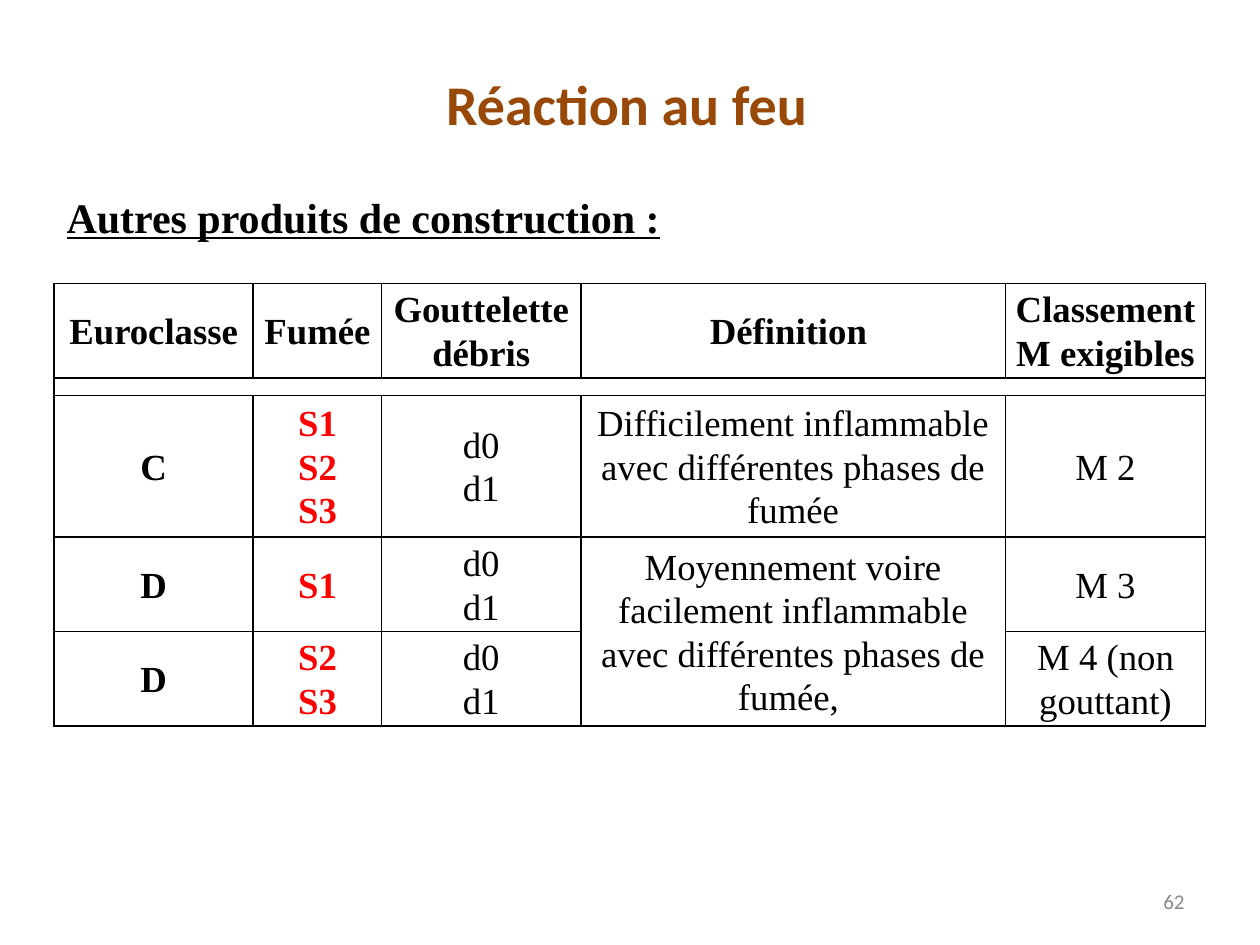
from pptx import Presentation
from pptx.dml.color import RGBColor
from pptx.enum import text as t
from pptx.oxml import xmlchemy as x
from pptx.util import Inches, Pt

BLACK = RGBColor(0, 0, 0)
RED = RGBColor(0xFF, 0, 0)
BROWN = RGBColor(0x98, 0x48, 0x07)
GREY = RGBColor(0x89, 0x89, 0x89)
SANS, SERIF = "Calibri", "Times New Roman"
LEFT, MID, RIGHT = t.PP_ALIGN.LEFT, t.PP_ALIGN.CENTER, t.PP_ALIGN.RIGHT


class Page:
    """Style and current slide."""

    def __init__(self, deck):
        self.slide = deck.slides.add_slide(deck.slide_layouts[6])

    def run(self, para, words, size, face, color, bold=False, line=False):
        run = para.add_run()
        run.text = words
        font = run.font
        font.size, font.name, font.bold = Pt(size), face, bold
        font.color.rgb = color
        if line:
            font.underline = True

    def label(self, box, words, size, face, color, align=MID,
              anchor=t.MSO_ANCHOR.MIDDLE, wrap=True, **style):
        frame = self.slide.shapes.add_textbox(*map(Inches, box)).text_frame
        frame.word_wrap, frame.vertical_anchor = wrap, anchor
        if not wrap:
            frame.auto_size = t.MSO_AUTO_SIZE.SHAPE_TO_FIT_TEXT
        para = frame.paragraphs[0]
        para.alignment = align
        self.run(para, words, size, face, color, **style)

    def border(self, cell):
        props = cell._tc.get_or_add_tcPr()
        for side in ("lnL", "lnR", "lnT", "lnB"):
            edge = x.OxmlElement(f"a:{side}")
            edge.set("w", str(Pt(1)))
            fill = x.OxmlElement("a:solidFill")
            tint = x.OxmlElement("a:srgbClr")
            tint.set("val", str(BLACK))
            fill.append(tint)
            edge.append(fill)
            props.append(edge)

    def cell(self, cell, lines, color, bold):
        self.border(cell)
        cell.fill.background()
        cell.vertical_anchor = t.MSO_ANCHOR.MIDDLE
        cell.margin_left = cell.margin_right = Inches(0.08)
        cell.margin_top = cell.margin_bottom = 0
        frame = cell.text_frame
        for i, words in enumerate(lines):
            para = frame.add_paragraph() if i else frame.paragraphs[0]
            para.alignment, para.line_spacing = MID, 1.07
            for j, part in enumerate(words.split("\n")):
                if j:
                    para.add_line_break()
                self.run(para, part, 21, SERIF, color, bold)
        if not lines:
            # Small type keeps the spacer row thin
            end = x.OxmlElement("a:endParaRPr")
            end.set("sz", "600")
            frame.paragraphs[0]._p.append(end)

    def table(self, spot, cols, rows, data, spans):
        size = sum(cols), sum(rows)
        grid = self.slide.shapes.add_table(
            len(rows), len(cols), *map(Inches, spot + size)).table
        grid.first_row = grid.horz_banding = False
        for col, width in zip(grid.columns, cols):
            col.width = Inches(width)
        for row, height in zip(grid.rows, rows):
            row.height = Inches(height)
        for r, line in enumerate(data):
            for c, lines in enumerate(line):
                color = RED if r and c == 1 else BLACK
                self.cell(grid.cell(r, c), lines, color, r == 0 or c < 2)
        for start, stop in spans:
            grid.cell(*start).merge(grid.cell(*stop))


deck = Presentation()
deck.slide_width, deck.slide_height = Inches(10), Inches(7.5)
page = Page(deck)

# Headings and page number
page.label((7.17, 6.95, 2.33, 0.4), "62", 12, SANS, GREY, RIGHT)
page.label((0.27, 0.3, 9.41, 1.03), "Réaction au feu", 32, SANS, BROWN, bold=True)
page.label((0.43, 1.47, 4.96, 0.51), "Autres produits de construction :", 24, SERIF,
           BLACK, LEFT, t.MSO_ANCHOR.TOP, wrap=False, bold=True, line=True)

# Fire classes
DROPS = ["d0", "d1"]
DATA = [
    [["Euroclasse"], ["Fumée"], ["Gouttelette débris"], ["Définition "],
     ["Classement M exigibles"]],
    [[]] * 5,
    [["C"], ["S1\nS2", "S3"], DROPS,
     ["Difficilement inflammable avec différentes phases de fumée"], ["M 2"]],
    [["D"], ["S1"], DROPS,
     ["Moyennement voire facilement inflammable avec différentes phases de fumée, "],
     ["M 3"]],
    [["D"], ["S2", "S3"], DROPS, [], ["M 4 (non gouttant)"]],
]
page.table((0.43, 2.25), (1.58, 1.02, 1.58, 3.37, 1.59),
           (0.75, 0.14, 1.12, 0.75, 0.75), DATA,
           [((1, 0), (1, 4)), ((3, 3), (4, 3))])

deck.save("out.pptx")
